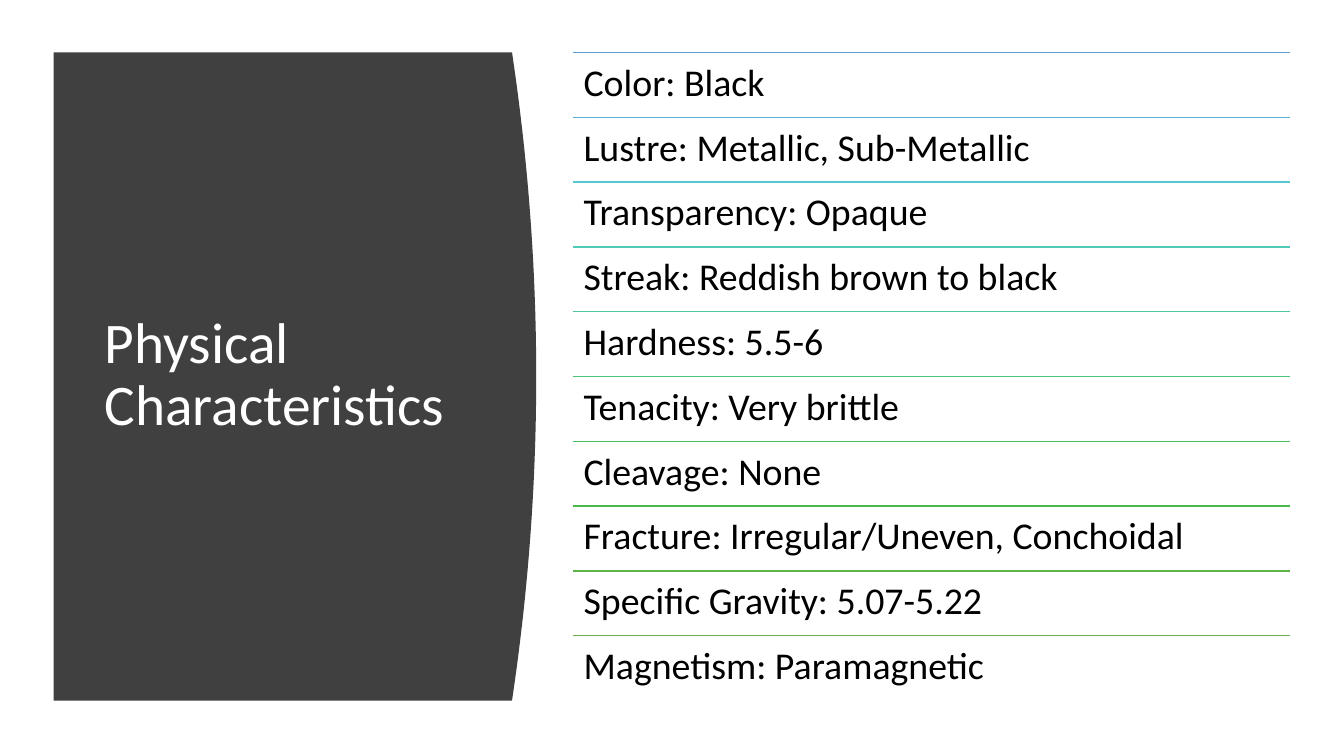
from lxml import etree
from pptx import Presentation
from pptx import util as u
from pptx.dml.color import RGBColor
from pptx.enum import shapes, text
from pptx.oxml.ns import qn

PROPERTIES = [
    ("Color: Black", "5B9BD5"),
    ("Lustre: Metallic, Sub-Metallic", "58B1D2"),
    ("Transparency: Opaque", "55C7CE"),
    ("Streak: Reddish brown to black", "52CAB8"),
    ("Hardness: 5.5-6", "4FC79C"),
    ("Tenacity: Very brittle", "4CC37F"),
    ("Cleavage: None", "49BF64"),
    ("Fracture: Irregular/Uneven, Conchoidal", "47BA49"),
    ("Specific Gravity: 5.07-5.22", "5CB447"),
    ("Magnetism: Paramagnetic", "70AD47"),
]
ROWS = len(PROPERTIES)
LIST_LEFT, LIST_RIGHT = 42.6, 96


def rgb(value):
    return RGBColor.from_string(value)


class Deck:
    font = "Calibri"
    top, bottom = 0.52, 6.95

    def __init__(self):
        self.prs = Presentation()
        self.prs.slide_width = u.Inches(13.33)
        self.prs.slide_height = u.Inches(7.5)
        self.s = self.prs.slides.add_slide(self.prs.slide_layouts[6])

    def x(self, percent):
        return round(self.prs.slide_width * percent / 100)

    def y(self, row):
        return u.Inches(self.top + (self.bottom - self.top) * row / ROWS)

    def panel(self, left, edge, bulge, color, steps=40):
        fractions = [i / steps for i in range(steps + 1)]
        curve = [(self.x(edge + bulge * 4 * f * (1 - f)), self.y(ROWS * f))
                 for f in fractions]
        fb = self.s.shapes.build_freeform(self.x(left), self.y(0))
        fb.add_line_segments(curve + [(self.x(left), self.y(ROWS))], close=True)
        sp = fb.convert_to_shape()
        sp.shadow.inherit = False
        sp.fill.solid()
        sp.fill.fore_color.rgb = rgb(color)
        sp.line.fill.background()

    def label(self, words, left, right, row, rows, size, color, anchor, inset):
        sp = self.s.shapes.add_textbox(self.x(left), self.y(row),
                                       self.x(right - left),
                                       self.y(row + rows) - self.y(row))
        tf = sp.text_frame
        tf.word_wrap = True
        tf.vertical_anchor = anchor
        tf.margin_left = tf.margin_right = u.Inches(inset)
        tf.margin_top = tf.margin_bottom = u.Inches(inset)
        p = tf.paragraphs[0]
        p.text = words
        p.line_spacing = 0.9
        p.font.name = self.font
        p.font.size = u.Pt(size)
        p.font.color.rgb = rgb(color)

    def rule(self, left, right, row, color):
        line = self.s.shapes.add_connector(shapes.MSO_CONNECTOR.STRAIGHT,
                                           self.x(left), self.y(row),
                                           self.x(right), self.y(row))
        line.line.color.rgb = rgb(color)
        line.line.width = u.Pt(1)
        etree.SubElement(line._element.spPr, qn("a:effectLst"))


def main():
    deck = Deck()
    deck.panel(4, 38.1, 1.8, "404040")
    deck.label("Physical Characteristics", 7.05, 35.1, 0.92, 8.14, 41, "FFFFFF",
               text.MSO_ANCHOR.MIDDLE, 0.1)
    for row, (words, color) in enumerate(PROPERTIES):
        deck.rule(LIST_LEFT, LIST_RIGHT, row, color)
        deck.label(words, LIST_LEFT, LIST_RIGHT, row, 1, 27, "000000",
                   text.MSO_ANCHOR.TOP, 0.11)
    deck.prs.save("out.pptx")


if __name__ == "__main__":
    main()
